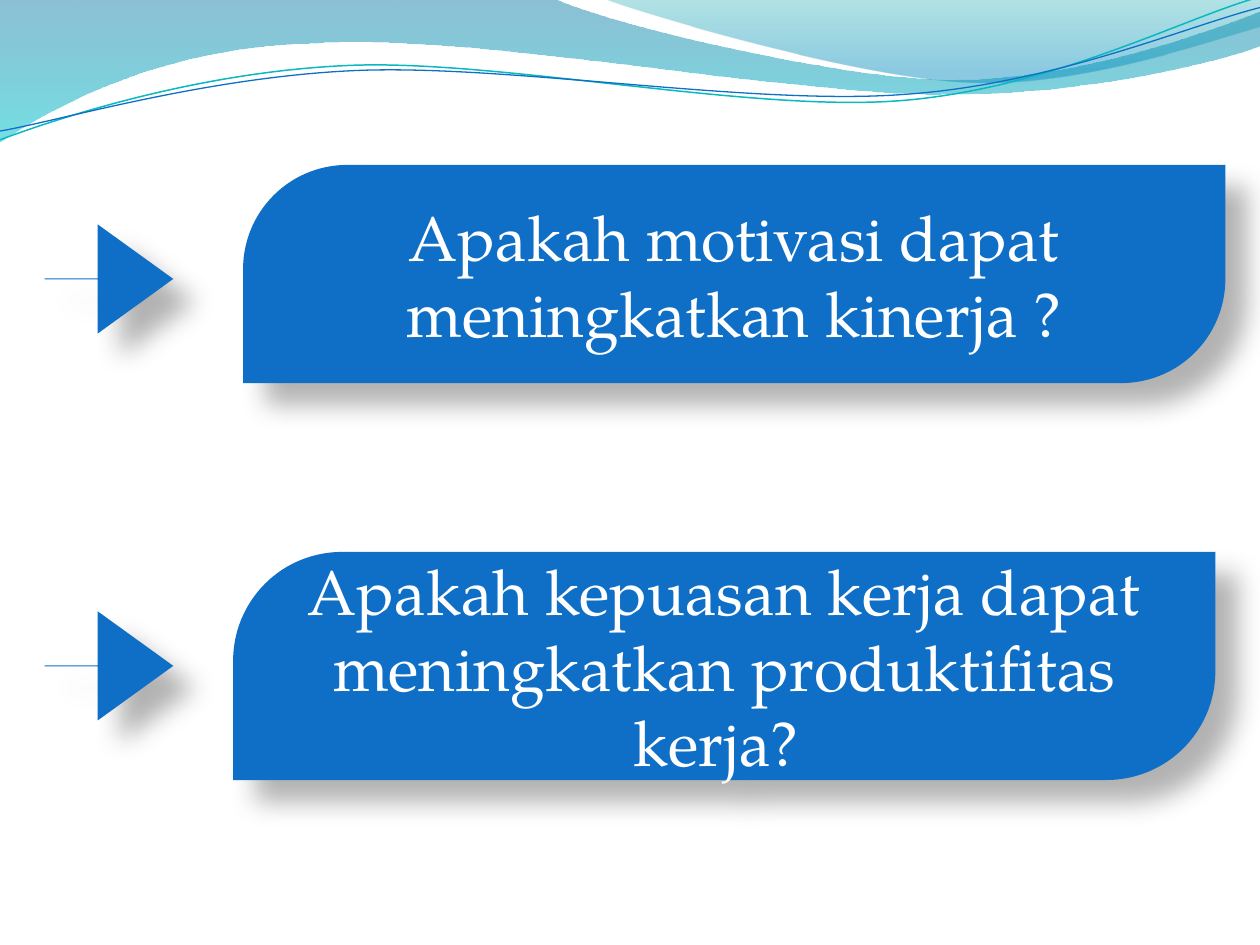
from math import cos, radians, sin
from lxml.etree import SubElement
from pptx import Presentation
from pptx.dml.color import RGBColor
from pptx.enum.shapes import MSO_SHAPE
from pptx.enum.text import MSO_ANCHOR, PP_ALIGN
from pptx.oxml.ns import qn
from pptx.util import Pt

COLORS = {
    "blue": "0F6FC6", "teal": "0AB8BF", "white": "FFFFFF", "black": "000000",
    "deep": "0074A1", "aqua": "00C6CF", "sea": "00A1A9", "sky": "008BBF",
}
FONT = {"name": "TeX Gyre Pagella", "size": Pt(36)}
TILT = -2.7

# Frame (left, top, width, height), then the outline, all in points:
# a pair is a straight step, six numbers are a Bezier curve
BANDS = [
    ((-0.7, -0.7, 721.4, 82.1),
     [(0, 0), (316.8, -0.7),
      (342.7, 12.2, 478.1, 45.4, 545.8, 45.4),
      (614.2, 45.4, 689.8, 18.7, 720, 6.5),
      (720.7, 25.9),
      (707.8, 31.7, 626.4, 54.7, 537.1, 54),
      (447.8, 54, 275, 20.2, 185, 24.5),
      (92.9, 25.9, 33.1, 59.8, -0.7, 81.4),
      (0, 0)],
     [(0, "deep", 45), (1, "aqua", 55)]),
    ((344.9, -0.7, 375.1, 50.4),
     [(344.9, -0.7),
      (366.5, 7.9, 491, 44.6, 553.7, 46.8),
      (616.3, 49.7, 691.9, 23, 720, 15.1),
      (720, 0), (344.9, -0.7)],
     [(0, "sea", 30), (0.8, "sky", 45)]),
]
WAVES = [
    ((-1.4, 15.8, 721.4, 51.1),
     [(0, 79.9),
      (34.6, 67, 113.8, 41, 199.4, 37.4),
      (284.4, 33.8, 427, 64.1, 513.4, 57.6),
      (599.8, 51.1, 675.4, 10.8, 718.6, -1.4)], "teal", 0.85),
    ((-1.4, 21.6, 722.2, 41.8),
     [(0, 74.9),
      (33.8, 69.1, 118.1, 43.9, 203.8, 40.3),
      (290.2, 36.7, 429.8, 60.5, 516.2, 54),
      (601.9, 48.2, 677.5, 15.1, 720, 4.3)], "blue", 0.75),
]

# Arrow top, box (left, top, width, height), question
ITEMS = [
    (128.2, (138.9, 94.3, 561.3, 124.6),
     "Apakah motivasi dapat meningkatkan kinerja ?"),
    (349.3, (133.2, 315.4, 561.3, 130.3),
     "Apakah kepuasan kerja dapat meningkatkan produktifitas kerja? "),
]


def rgb(name):
    return RGBColor.from_string(COLORS[name])


def put(obj, values):
    for key, value in values.items():
        setattr(obj, key, value)


def local(frame, x, y, tilt):
    """Place a slide point inside a frame that is turned by tilt."""
    left, top, width, height = frame
    dx, dy = x - left - width / 2, y - top - height / 2
    c, s = cos(radians(-tilt)), sin(radians(-tilt))
    return width / 2 + dx * c - dy * s, height / 2 + dx * s + dy * c


def draw(slide, frame, steps, tilt=0):
    """Freeform with true curves."""
    left, top, width, height = frame
    pen = slide.shapes.build_freeform(Pt(left), Pt(top))
    pen.add_line_segments([(Pt(left + width), Pt(top + height))], close=False)
    shape = pen.convert_to_shape()
    shape.shadow.inherit = False
    shape.rotation = tilt
    track = next(shape._element.spPr.iter(qn("a:path")))
    for old in list(track):
        track.remove(old)
    for i, step in enumerate(steps):
        kind = "moveTo" if i == 0 else "lnTo" if len(step) == 2 else "cubicBezTo"
        node = SubElement(track, qn("a:" + kind))
        for x, y in zip(step[::2], step[1::2]):
            x, y = local(frame, x, y, tilt)
            SubElement(node, qn("a:pt"), x=str(Pt(x)), y=str(Pt(y)))
    if steps[0] == steps[-1]:
        track.remove(track[-1])
        SubElement(track, qn("a:close"))
    return shape


def add_band(slide, frame, steps, stops):
    shape = draw(slide, frame, steps)
    shape.line.fill.background()
    shape.fill.gradient()
    shape.fill.gradient_angle = 270
    marks = shape._element.spPr.iter(qn("a:gs"))
    for stop, mark, (pos, name, alpha) in zip(shape.fill.gradient_stops, marks, stops):
        stop.position = pos
        stop.color.rgb = rgb(name)
        SubElement(mark[0], qn("a:alpha"), val=str(alpha * 1000))


def add_wave(slide, frame, steps, name, width):
    shape = draw(slide, frame, steps, TILT)
    shape.fill.background()
    shape.line.color.rgb = rgb(name)
    shape.line.width = Pt(width)


def add_shade(shape):
    """Soft shadow down to the right."""
    shape.shadow.inherit = False
    effects = shape._element.spPr.find(qn("a:effectLst"))
    shade = SubElement(effects, qn("a:outerShdw"), blurRad=str(Pt(15)),
                       dist=str(Pt(18)), dir=str(45 * 60000),
                       algn="tl", rotWithShape="0")
    color = SubElement(shade, qn("a:srgbClr"), val=COLORS["black"])
    SubElement(color, qn("a:alpha"), val="30000")


def add_block(slide, kind, place, adjust):
    shape = slide.shapes.add_shape(kind, *map(Pt, place))
    for i, value in enumerate(adjust):
        shape.adjustments[i] = value
    shape.fill.solid()
    shape.fill.fore_color.rgb = rgb("blue")
    shape.line.fill.background()
    add_shade(shape)
    return shape


def add_text(shape, text):
    frame = shape.text_frame
    put(frame, {"word_wrap": True, "vertical_anchor": MSO_ANCHOR.MIDDLE})
    para = frame.paragraphs[0]
    para.alignment = PP_ALIGN.CENTER
    run = para.add_run()
    run.text = text
    put(run.font, FONT)
    run.font.color.rgb = rgb("white")


def main():
    deck = Presentation()
    put(deck, {"slide_width": Pt(720), "slide_height": Pt(540)})
    slide = deck.slides.add_slide(deck.slide_layouts[6])

    # Header bands and waves
    for band in BANDS:
        add_band(slide, *band)
    for wave in WAVES:
        add_wave(slide, *wave)

    # Arrows, then questions
    for top, _, _ in ITEMS:
        add_block(slide, MSO_SHAPE.RIGHT_ARROW, (25.5, top, 73.5, 62.4), (0.01, 0.692))
    for _, place, text in ITEMS:
        box = add_block(slide, MSO_SHAPE.ROUND_2_DIAG_RECTANGLE, place, (0.477, 0))
        add_text(box, text)

    deck.save("out.pptx")


if __name__ == "__main__":
    main()
